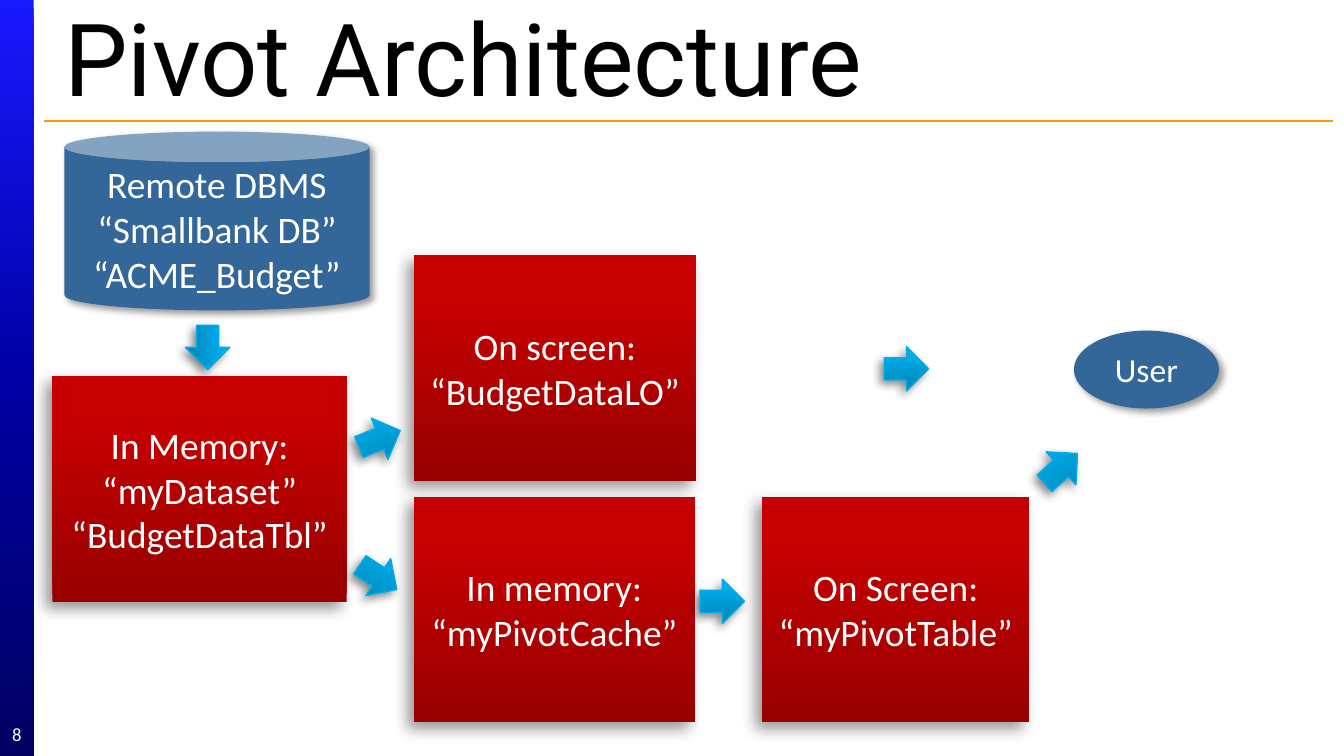
from lxml import etree
from pptx import Presentation
from pptx.dml.color import RGBColor
from pptx.enum.shapes import MSO_CONNECTOR, MSO_SHAPE
from pptx.enum.text import MSO_ANCHOR, PP_ALIGN
from pptx.oxml.ns import qn
from pptx.util import Inches, Pt

RECT, CAN, OVAL = MSO_SHAPE.RECTANGLE, MSO_SHAPE.CAN, MSO_SHAPE.OVAL
ARROW = MSO_SHAPE.RIGHT_ARROW
STRAIGHT = MSO_CONNECTOR.STRAIGHT
LEFT, CENTER = PP_ALIGN.LEFT, PP_ALIGN.CENTER
MIDDLE = MSO_ANCHOR.MIDDLE

COLORS = {"white": "FFFFFF", "black": "000000", "rule": "FF9900",
          "steel": "336699", "arrow line": "00ACEB"}
# (position %, colour) stops
GRADIENTS = {
    "sidebar": [(0, "1919FF"), (50, "0000A5"), (100, "000060")],
    "red": [(0, "980000"), (80, "C60000"), (100, "C70000")],
    "arrow": [(0, "0083B3"), (80, "00ABE9"), (100, "00ABEA")],
}
# opacity %, blur pt, distance pt, direction in degrees
SHADOWS = {"steel": (40, 4, 3, 45), "red": (40, 8, 5, 135),
           "arrow": (45, 5, 3, 135)}

TITLE = "Pivot Architecture"
PAGE = "8"
SLIDE_W = 10
SLIDE_H = SLIDE_W * 9 / 16
SIDEBAR_W = 0.25
ARROW_SIZE = 0.33

# kind, fill, (left, top, width, height), font size, paragraphs ("\n" breaks a line)
NODES = [
    (OVAL, "steel", (7.99, 2.46, 1.08, 0.58), 18, ["User"]),
    (CAN, "steel", (0.48, 0.98, 2.27, 1.33), 20,
     ["Remote DBMS", "“Smallbank DB”\n“ACME_Budget”"]),
    (RECT, "red", (0.39, 2.8, 2.19, 1.68), 20,
     ["In Memory:", "“myDataset” “BudgetDataTbl”"]),
    (RECT, "red", (3.08, 1.9, 2.1, 1.68), 20, ["On screen:", "“BudgetDataLO”"]),
    (RECT, "red", (3.08, 3.7, 2.09, 1.67), 20, ["In memory:", "“myPivotCache”"]),
    (RECT, "red", (5.67, 3.7, 1.99, 1.67), 20, ["On Screen:\n“myPivotTable”"]),
]
# left, top, rotation
ARROWS = [(2.66, 3.1, 338.1), (1.38, 2.42, 90), (2.65, 4.13, 33.8),
          (5.21, 4.31, 0), (7.73, 3.32, 317.9), (6.58, 2.58, 0)]


def rgb(name):
    return RGBColor.from_string(COLORS[name])


def add_color(parent, value):
    return etree.SubElement(parent, qn("a:srgbClr"), val=value)


def fill_gradient(sp, name, angle):
    """Fill with the named stops; angle runs counter-clockwise."""
    sp.fill.gradient()
    sp.fill.gradient_angle = angle
    stops = next(sp._element.spPr.iter(qn("a:gsLst")))
    for stop in list(stops):
        stops.remove(stop)
    for position, value in GRADIENTS[name]:
        add_color(etree.SubElement(stops, qn("a:gs"), pos=str(position * 1000)), value)


def add_shadow(sp, name):
    opacity, blur, distance, direction = SHADOWS[name]
    effects = sp._element.spPr.find(qn("a:effectLst"))
    outer = etree.SubElement(
        effects, qn("a:outerShdw"), blurRad=str(Pt(blur)), dist=str(Pt(distance)),
        dir=str(direction * 60000), algn="ctr", rotWithShape="0")
    color = add_color(outer, COLORS["black"])
    etree.SubElement(color, qn("a:alpha"), val=str(opacity * 1000))


def add_shape(s, kind, box, fill):
    sp = s.shapes.add_shape(kind, *map(Inches, box))
    sp.shadow.inherit = False
    sp.line.fill.background()
    if fill in GRADIENTS:
        fill_gradient(sp, fill, 270 if fill == "sidebar" else 90)
    else:
        sp.fill.solid()
        sp.fill.fore_color.rgb = rgb(fill)
    if fill in SHADOWS:
        add_shadow(sp, fill)
    return sp


def write(sp, paragraphs, size, color="white", font="Calibri", align=CENTER):
    tf = sp.text_frame
    tf.word_wrap = True
    tf.vertical_anchor = MIDDLE
    for i, text in enumerate(paragraphs):
        p = tf.add_paragraph() if i else tf.paragraphs[0]
        p.alignment = align
        for j, line in enumerate(text.split("\n")):
            if j:
                p.add_line_break()
            r = p.add_run()
            r.text = line
            r.font.size = Pt(size)
            r.font.name = font
            r.font.color.rgb = rgb(color)
    return tf


def add_text(s, box, *args, **style):
    return write(s.shapes.add_textbox(*map(Inches, box)), *args, **style)


prs = Presentation()
prs.slide_width, prs.slide_height = Inches(SLIDE_W), Inches(SLIDE_H)
s = prs.slides.add_slide(prs.slide_layouts[6])

add_shape(s, RECT, (0, 0, SIDEBAR_W, SLIDE_H), "sidebar")
rule = s.shapes.add_connector(STRAIGHT, *map(Inches, (0.33, 0.9, 9.92, 0.9)))
rule.line.color.rgb = rgb("rule")
rule.line.width = Pt(0.75)
etree.SubElement(rule._element.spPr, qn("a:effectLst"))

add_text(s, (0.38, 0.15, 9.58, 0.53), [TITLE], 54, "black", "Roboto", LEFT)
tf = add_text(s, (0, 5.31, SIDEBAR_W, 0.3), [PAGE], 10)
tf.margin_left = tf.margin_right = tf.margin_top = tf.margin_bottom = 0

for kind, fill, box, size, paragraphs in NODES:
    sp = add_shape(s, kind, box, fill)
    if kind == CAN:
        sp.adjustments[0] = 0.171
    write(sp, paragraphs, size)

for left, top, rotation in ARROWS:
    sp = add_shape(s, ARROW, (left, top, ARROW_SIZE, ARROW_SIZE), "arrow")
    sp.rotation = rotation
    sp.line.color.rgb = rgb("arrow line")
    sp.line.width = Pt(0.75)

prs.save("out.pptx")
